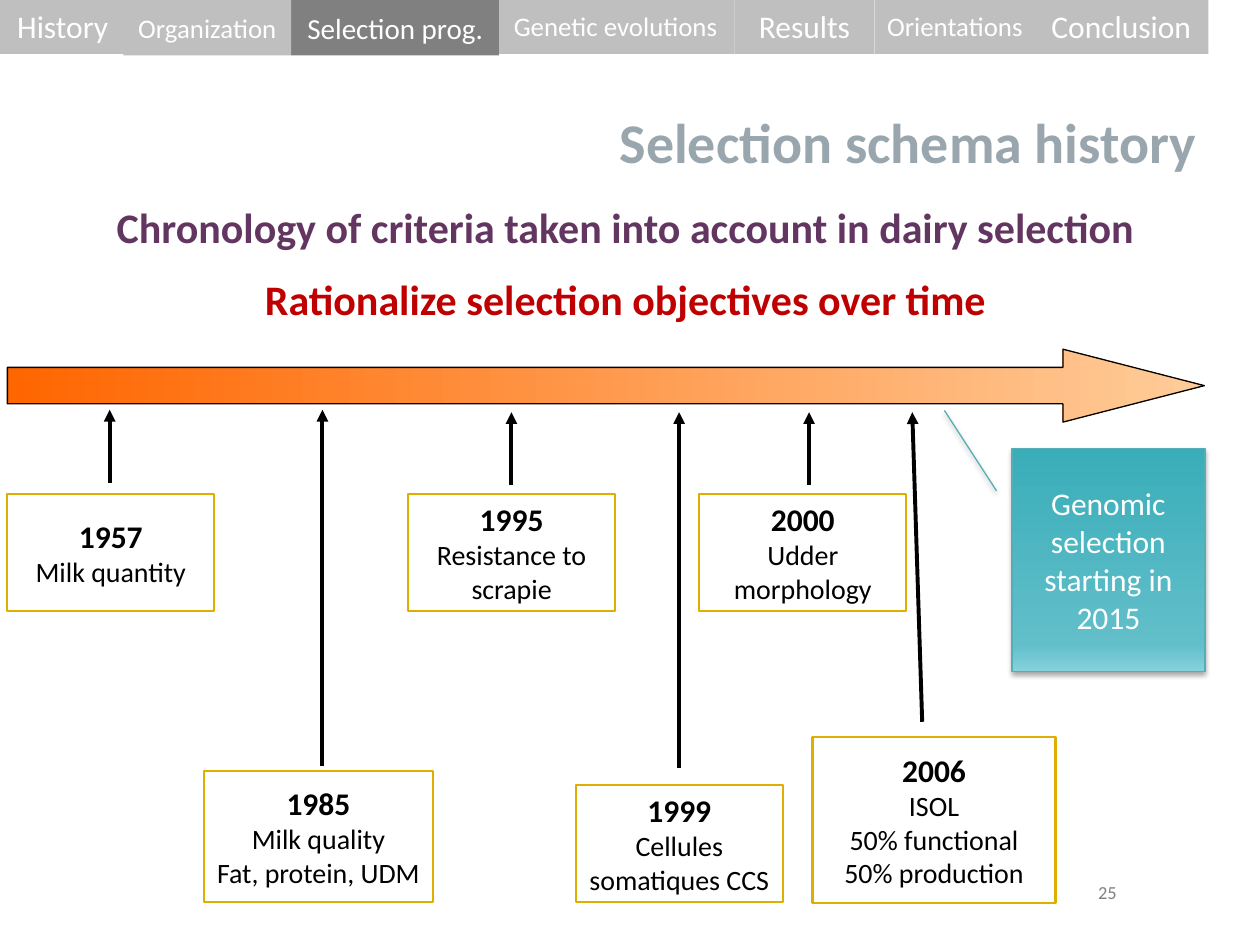
from copy import deepcopy

from lxml import etree
from pptx import Presentation
from pptx.dml.color import RGBColor
from pptx.enum.shapes import MSO_CONNECTOR, MSO_SHAPE
from pptx.enum.text import MSO_ANCHOR, PP_ALIGN
from pptx.oxml.ns import qn
from pptx.util import Cm, Pt

RECT, ARROW = MSO_SHAPE.RECTANGLE, MSO_SHAPE.RIGHT_ARROW
CALLOUT = MSO_SHAPE.LINE_CALLOUT_1
STRAIGHT = MSO_CONNECTOR.STRAIGHT
MIDDLE, TOP = MSO_ANCHOR.MIDDLE, MSO_ANCHOR.TOP
CENTER, RIGHT = PP_ALIGN.CENTER, PP_ALIGN.RIGHT

HEX = {
    "black": "000000", "white": "FFFFFF", "gold": "DEAE00",
    "tab": "BFBFBF", "active": "808080", "title": "99A6AE",
    "plum": "633661", "red": "C00000", "edge": "55AEB7",
    "orange": "FF6600", "peach": "FFCC99",
    "pale": "85D2DC", "aqua": "62BFCA", "teal": "39ADB8",
}
RGB = {name: RGBColor.from_string(code) for name, code in HEX.items()}


def write(shape, lines, align=CENTER, anchor=MIDDLE, wrap=True, gap=0):
    """Fill a shape with lines of (text, size, colour, bold)."""
    frame = shape.text_frame
    frame.word_wrap = wrap
    frame.vertical_anchor = anchor
    for i, (text, size, color, bold) in enumerate(lines):
        para = frame.paragraphs[0] if i == 0 else frame.add_paragraph()
        para.alignment = align
        if i:
            para.space_before = Pt(gap)
        run = para.add_run()
        run.text = text
        run.font.name = "Calibri"
        run.font.size = Pt(size)
        run.font.bold = bold
        run.font.color.rgb = RGB[color]


def shade(shape, stops, angle):
    """Give a shape a linear gradient of (position, colour) stops."""
    fill = shape.fill
    fill.gradient()
    fill.gradient_angle = angle
    group = shape._element.spPr.find(".//" + qn("a:gsLst"))
    while len(group) < len(stops):
        group.append(deepcopy(group[0]))
    for stop, (pos, color) in zip(fill.gradient_stops, stops):
        stop.color.rgb = RGB[color]
        stop.position = pos


prs = Presentation()
prs.slide_width, prs.slide_height = Cm(25.4), Cm(19.05)
slide = prs.slides.add_slide(prs.slide_layouts[6])
shapes = slide.shapes

# Time arrow
band = shapes.add_shape(ARROW, Cm(0.15), Cm(7.04), Cm(24.13), Cm(1.47))
band.adjustments[0], band.adjustments[1] = 0.5, 1.94
band.shadow.inherit = False
shade(band, [(0, "orange"), (1, "peach")], 0)
band.line.color.rgb = RGB["black"]
band.line.width = Pt(0.75)

# Pointers up to the time arrow: x at top, top, x at bottom, bottom
pointers = [
    (2.21, 8.26, 2.21, 9.73),
    (6.5, 8.26, 6.5, 15.44),
    (10.31, 8.31, 10.31, 9.78),
    (13.69, 8.31, 13.69, 15.49),
    (16.31, 8.31, 16.31, 9.78),
    (18.39, 8.31, 18.59, 14.55),
]
for ends in pointers:
    link = shapes.add_connector(STRAIGHT, *[Cm(n) for n in ends])
    link.line.color.rgb = RGB["black"]
    link.line.width = Pt(2.25)
    link.line._get_or_add_ln().append(
        etree.Element(qn("a:headEnd"), type="triangle"))
    etree.SubElement(link._element.spPr, qn("a:effectLst"))

# Headings and page number
heads = shapes.add_textbox(Cm(0.51), Cm(3.94), Cm(24.2), Cm(2.82))
write(heads, [
    ("Chronology of criteria taken into account in dairy selection",
     24, "plum", True),
    ("Rationalize selection objectives over time", 24, "red", True),
], anchor=TOP, gap=12)
title = shapes.add_textbox(Cm(-0.05), Cm(1.12), Cm(24.43), Cm(3.45))
write(title, [("Selection schema history", 32, "title", True)], RIGHT)
page = shapes.add_textbox(Cm(21.59), Cm(17.78), Cm(1.47), Cm(0.43))
write(page, [("25", 10.5, "active", False)])

# Genomic callout
note = shapes.add_shape(CALLOUT, Cm(20.4), Cm(9.04), Cm(3.89), Cm(4.5))
for i, value in enumerate((0.19, -0.08, -0.17, -0.35)):
    note.adjustments[i] = value
shade(note, [(0, "pale"), (0.12, "aqua"), (1, "teal")], 90)
note.line.color.rgb = RGB["edge"]
note.line.width = Pt(0.75)
write(note, [("Genomic selection starting in 2015", 18, "white", False)])
effects = etree.SubElement(note._element.spPr, qn("a:effectLst"))
shadow = etree.SubElement(
    effects, qn("a:outerShdw"), blurRad=str(Pt(3.1)), dist=str(Pt(1.8)),
    dir="5400000", rotWithShape="0")
tint = etree.SubElement(shadow, qn("a:srgbClr"), val=HEX["black"])
etree.SubElement(tint, qn("a:alpha"), val="35000")

# Milestones: year, details, left, top, width, height
steps = [
    ("1957", ["Milk quantity"], 0.15, 9.96, 4.17, 2.36),
    ("1985", ["Milk quality", "Fat, protein, UDM"], 4.11, 15.54, 4.62, 2.64),
    ("1995", ["Resistance to scrapie"], 8.23, 9.96, 4.17, 2.36),
    ("1999", ["Cellules somatiques CCS"], 11.61, 15.82, 4.17, 2.36),
    ("2000", ["Udder morphology"], 14.1, 9.96, 4.17, 2.36),
    ("2006", ["ISOL", "50% functional", "50% production"],
     16.38, 14.86, 4.9, 3.35),
]
for year, details, *place in steps:
    card = shapes.add_shape(RECT, *[Cm(n) for n in place])
    card.shadow.inherit = False
    card.fill.solid()
    card.fill.fore_color.rgb = RGB["white"]
    card.line.color.rgb = RGB["gold"]
    card.line.width = Pt(1.25)
    write(card, [(year, 18, "black", True)]
          + [(text, 16, "black", False) for text in details])

# Navigation tabs: label, size, left, right, top, colour
tabs = [
    ("History", 18, -0.08, 2.61, -0.03, "tab"),
    ("Genetic evolutions", 15.3, 10.01, 14.81, -0.03, "tab"),
    ("Results", 18, 14.81, 17.63, -0.03, "tab"),
    ("Orientations", 15.3, 17.63, 20.87, -0.03, "tab"),
    ("Conclusion", 18, 20.85, 24.36, -0.03, "tab"),
    ("Selection prog.", 16.6, 5.87, 10.06, 0, "active"),
    ("Organization", 15.3, 2.49, 5.87, 0, "tab"),
]
for label, size, left, right, top, color in tabs:
    tab = shapes.add_shape(RECT, Cm(left), Cm(top), Cm(right - left), Cm(1.12))
    tab.shadow.inherit = False
    tab.fill.solid()
    tab.fill.fore_color.rgb = RGB[color]
    tab.line.fill.background()
    write(tab, [(label, size, "white", False)], wrap=False)

prs.save("out.pptx")
